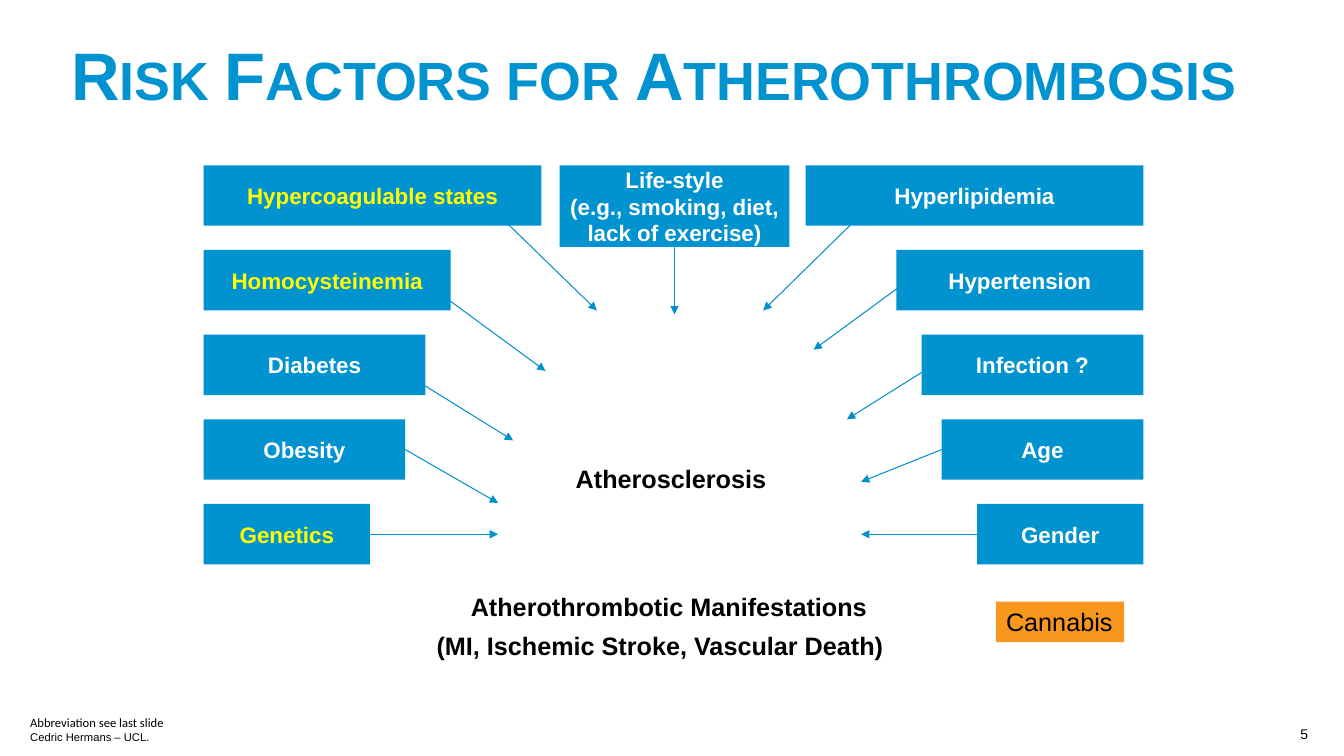
from lxml.etree import SubElement
from pptx import Presentation
from pptx.dml.color import RGBColor
from pptx.enum.shapes import MSO_CONNECTOR, MSO_SHAPE
from pptx.enum.text import MSO_ANCHOR, PP_ALIGN
from pptx.oxml.ns import qn
from pptx.util import Inches, Pt

COLORS = {
    "blue": "0093CF",
    "line": "0090CA",
    "orange": "F8971D",
    "yellow": "FFFF00",
    "white": "FFFFFF",
    "black": "000000",
}
HEIGHT = 0.6
STEP = 0.84
WIDTHS = [3.35, 2.45, 2.2, 2, 1.65]
MIDDLE = (0, HEIGHT / 2)

# Each row: label, text color, arrow start and tip measured from the inner top corner.
LEFT = [
    ("Hypercoagulable states", "yellow", (-0.52, 0.4), (0.55, 1.44)),
    ("Homocysteinemia", "yellow", (0, 0.51), (0.94, 1.2)),
    ("Diabetes", "white", (0, 0.51), (0.87, 1.05)),
    ("Obesity", "white", MIDDLE, (0.92, 0.83)),
    ("Genetics", "yellow", MIDDLE, (1.27, 0.3)),
]
RIGHT = [
    ("Hyperlipidemia", "white", (-0.64, 0.4), (0.42, 1.44)),
    ("Hypertension", "white", (-0.12, 0.3), (0.82, 0.99)),
    ("Infection ?", "white", (-0.12, 0.3), (0.74, 0.84)),
    ("Age", "white", MIDDLE, (0.8, 0.62)),
    ("Gender", "white", MIDDLE, (1.15, 0.3)),
]


def color(name):
    return RGBColor.from_string(COLORS[name])


def write(shape, text, size, tint="black", bold=False, align=PP_ALIGN.LEFT,
          anchor=MSO_ANCHOR.TOP, pad=(0, 0), wrap=False, face="Arial"):
    frame = shape.text_frame
    frame.text = text
    frame.word_wrap = wrap
    frame.vertical_anchor = anchor
    frame.margin_left = frame.margin_right = Inches(pad[0])
    frame.margin_top = frame.margin_bottom = Inches(pad[1])
    for para in frame.paragraphs:
        para.alignment = align
        for run in para.runs:
            run.font.name = face
            run.font.size = Pt(size)
            run.font.bold = bold
            run.font.color.rgb = color(tint)


def add_label(slide, box, text, size, **style):
    label = slide.shapes.add_textbox(*map(Inches, box))
    write(label, text, size, **style)
    return label


def add_block(slide, box, fill):
    block = slide.shapes.add_shape(MSO_SHAPE.RECTANGLE, *map(Inches, box))
    block.shadow.inherit = False
    block.fill.solid()
    block.fill.fore_color.rgb = color(fill)
    block.line.fill.background()
    return block


def add_arrow(slide, start, tip):
    arrow = slide.shapes.add_connector(
        MSO_CONNECTOR.STRAIGHT, *map(Inches, (*start, *tip)))
    arrow.line.color.rgb = color("line")
    arrow.line.width = Pt(0.75)
    SubElement(arrow.line._get_or_add_ln(), qn("a:tailEnd"), type="triangle")
    SubElement(arrow._element.spPr, qn("a:effectLst"))
    return arrow


def add_factor(slide, box, text, tint, start, tip, site=None):
    arrow = add_arrow(slide, start, tip)
    block = add_block(slide, box, "blue")
    write(block, text, 16, tint, True, PP_ALIGN.CENTER, MSO_ANCHOR.MIDDLE,
          (0.05, 0.05))
    if site is not None:
        arrow.begin_connect(block, site)


def add_column(slide, box, rows, site):
    left, top, span = box
    sign = 1 if site == 3 else -1
    for row, (text, tint, start, tip) in enumerate(rows):
        width = WIDTHS[row]
        y = top + row * STEP
        x = left if site == 3 else left + span - width
        edge = x + width if site == 3 else x
        ends = [(edge + sign * dx, y + dy) for dx, dy in (start, tip)]
        add_factor(slide, (x, y, width, HEIGHT), text, tint, *ends,
                   site if start == MIDDLE else None)


def add_factors(slide, box):
    left, top, width = box
    span = WIDTHS[0]
    add_column(slide, (left, top, span), LEFT, 3)
    add_column(slide, (left + width - span, top, span), RIGHT, 1)
    life = (left + 3.53, top, 2.28, 0.81)
    mid = life[0] + life[2] / 2
    add_factor(slide, life,
               "Life-style\v(e.g., smoking, diet,\nlack of exercise)", "white",
               (mid, top + life[3]), (mid, top + 1.48), 2)


def add_title(slide, box):
    title = add_label(slide, box, "Risk Factors for Atherothrombosis", 48,
                      tint="blue", bold=True, align=PP_ALIGN.CENTER,
                      anchor=MSO_ANCHOR.BOTTOM, pad=(0.05, 0.05), wrap=True)
    run = title.text_frame.paragraphs[0].runs[0]
    run._r.get_or_add_rPr().set("cap", "small")


def add_outcome(slide, box):
    left, top = box
    for dx, dy, width, text in [
        (1.38, 0, 1.91, "Atherosclerosis"),
        (0.34, 1.27, 3.97, "Atherothrombotic Manifestations"),
        (0, 1.65, 4.47, "(MI, Ischemic Stroke, Vascular Death)"),
    ]:
        add_label(slide, (left + dx, top + dy, width, 0.3), text, 18, bold=True)


def add_drug(slide, box):
    write(add_block(slide, box, "orange"), "Cannabis", 18, pad=(0.1, 0.05))


def add_footer(slide, box):
    left, top, width = box
    add_label(slide, (left, top, 1.34, 0.15), "Abbreviation see last slide", 9,
              anchor=MSO_ANCHOR.BOTTOM, face="Calibri")
    add_label(slide, (left, top + 0.16, 1.19, 0.13), "Cedric Hermans – UCL.", 8,
              anchor=MSO_ANCHOR.BOTTOM)
    add_label(slide, (left + width - 0.45, top + 0.06, 0.45, 0.27), "5", 10,
              align=PP_ALIGN.CENTER, pad=(0.1, 0.05))


def main():
    deck = Presentation()
    deck.slide_width = Inches(13.33)
    deck.slide_height = Inches(7.5)
    slide = deck.slides.add_slide(deck.slide_layouts[6])
    add_title(slide, (0.3, 0.38, 12.37, 0.8))
    add_outcome(slide, (4.33, 4.6))
    add_factors(slide, (2.02, 1.64, 9.32))
    add_drug(slide, (9.88, 5.97, 1.27, 0.4))
    add_footer(slide, (0.3, 7.09, 12.86))
    deck.save("out.pptx")


if __name__ == "__main__":
    main()
